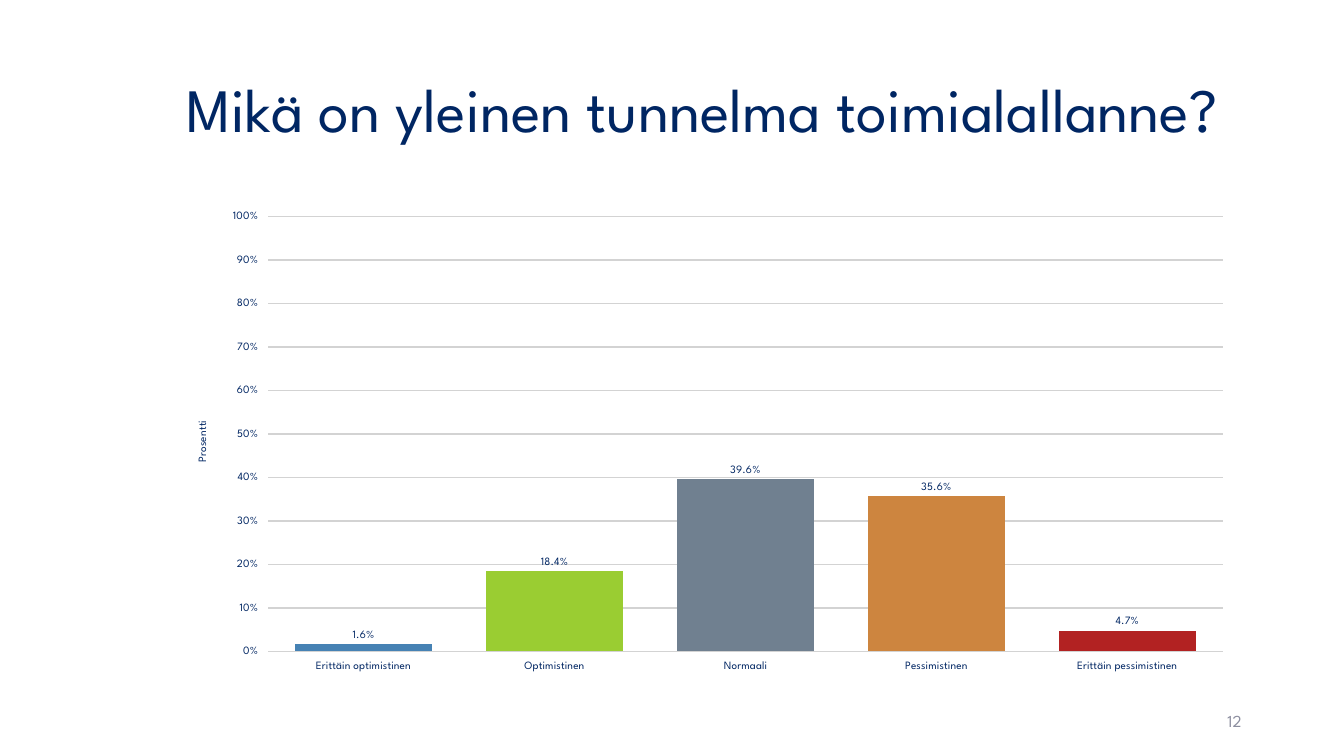
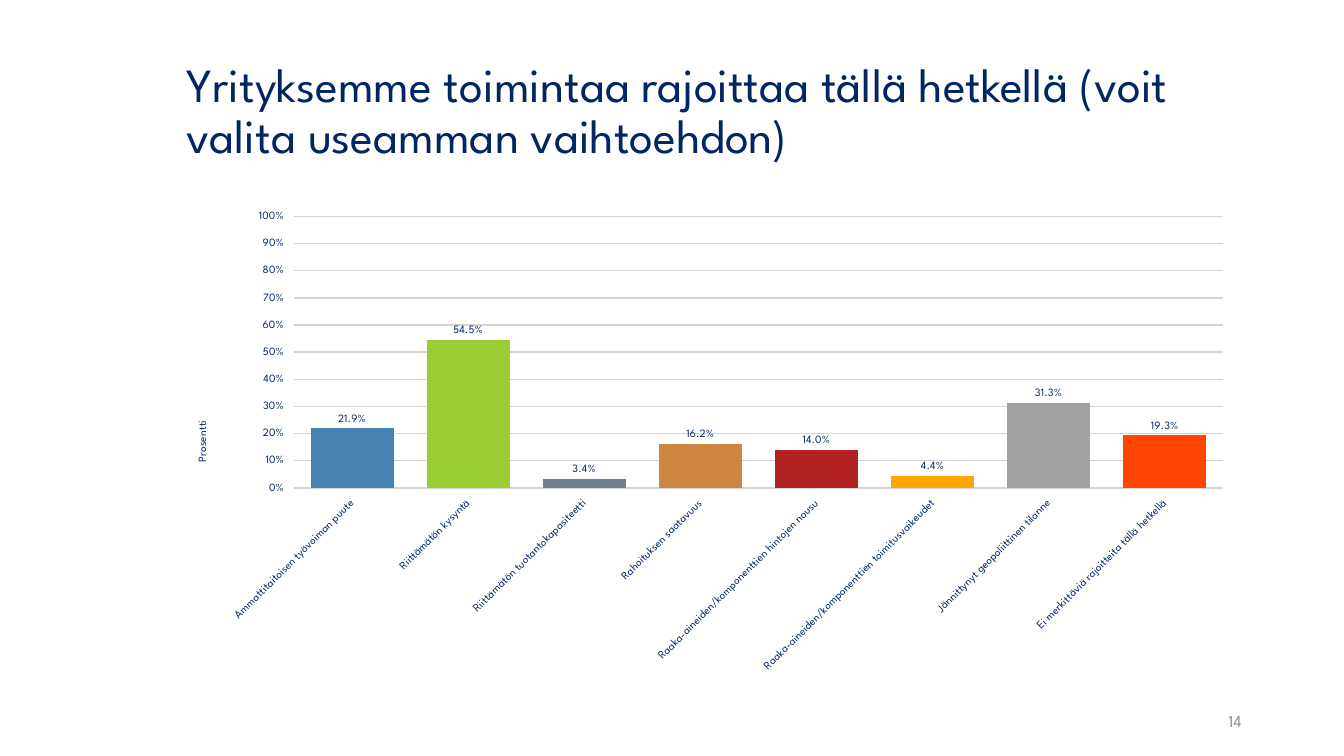
"""Build two survey slides, each with a title, a column chart and a page number."""
from dataclasses import dataclass

from pptx import Presentation
from pptx import util as u
from pptx.chart.data import CategoryChartData
from pptx.dml.color import RGBColor
from pptx.enum import chart as ch
from pptx.enum import text as t


@dataclass(frozen=True)
class Theme:
    font: str = "League Spartan"
    navy: str = "002663"
    muted: str = "8C8E9F"
    grid: str = "D3D3D3"
    bars: tuple = ("4682B4", "9ACD32", "708090", "CD853F",
                   "B22222", "FFA500", "A1A1A1", "FF4500")
    chart_size: int = 18
    label_size: int = 8
    number_size: int = 12


THEME = Theme()
SLIDE_SIZE = (1280, 720)
TITLE_BOX = (168, 38, 1017, 139)
CHART_BOX = (168, 192, 1017, 457)
NUMBER_BOX = (904, 667, 288, 38)

SURVEY = [
    {
        "title": "Mikä on yleinen tunnelma toimialallanne?",
        "title_size": 44,
        "number": "12",
        "slanted": False,
        "answers": {
            "Erittäin optimistinen": 0.016,
            "Optimistinen": 0.184,
            "Normaali": 0.396,
            "Pessimistinen": 0.356,
            "Erittäin pessimistinen": 0.047,
        },
    },
    {
        "title": "Yrityksemme toimintaa rajoittaa tällä hetkellä "
                 "(voit valita useamman vaihtoehdon)",
        "title_size": 34,
        "number": "14",
        "slanted": True,
        "answers": {
            "Ammattitaitoisen työvoiman puute": 0.219,
            "Riittämätön kysyntä": 0.545,
            "Riittämätön tuotantokapasiteetti": 0.034,
            "Rahoituksen saatavuus": 0.162,
            "Raaka-aineiden/komponenttien hintojen nousu": 0.14,
            "Raaka-aineiden/komponenttien toimitusvaikeudet": 0.044,
            "Jännittynyt geopoliittinen tilanne": 0.313,
            "Ei merkittäviä rajoitteita tällä hetkellä": 0.193,
        },
    },
]


def px(*lengths):
    return [u.Emu(length * 9525) for length in lengths]


def style(font, size, color=THEME.navy):
    font.name = THEME.font
    font.size = u.Pt(size)
    font.bold = False
    font.color.rgb = RGBColor.from_string(color)


def paint(fill, color):
    fill.solid()
    fill.fore_color.rgb = RGBColor.from_string(color)


def add_title(slide, wording, size):
    title = slide.shapes.title
    title.left, title.top, title.width, title.height = px(*TITLE_BOX)
    frame = title.text_frame
    frame.text = wording
    frame.auto_size = t.MSO_AUTO_SIZE.NONE
    frame.vertical_anchor = t.MSO_ANCHOR.MIDDLE
    heading = frame.paragraphs[0]
    heading.alignment = t.PP_ALIGN.LEFT
    heading.line_spacing = 0.9
    style(heading.font, size)


def add_number(slide, number):
    frame = slide.shapes.add_textbox(*px(*NUMBER_BOX)).text_frame
    frame.word_wrap = True
    frame.vertical_anchor = t.MSO_ANCHOR.MIDDLE
    frame.text = number
    page = frame.paragraphs[0]
    page.alignment = t.PP_ALIGN.RIGHT
    page.space_after = u.Pt(6)
    style(page.font, THEME.number_size, THEME.muted)


def format_axes(chart, slanted):
    answers, share = chart.category_axis, chart.value_axis
    for axis in (answers, share):
        axis.major_tick_mark = ch.XL_TICK_MARK.OUTSIDE
        axis.format.line.fill.background()
        style(axis.tick_labels.font, THEME.label_size)
    answers.has_major_gridlines = False
    if slanted:
        answers._element.txPr.bodyPr.set("rot", "-2700000")

    share.minimum_scale, share.maximum_scale = 0, 1
    share.major_unit = 0.1
    share.tick_labels.number_format = "0%"
    share.tick_labels.number_format_is_linked = False
    gridline = share.major_gridlines.format.line
    gridline.width = u.Pt(1)
    paint(gridline.fill, THEME.grid)
    caption = share.axis_title.text_frame
    caption.text = "Prosentti"
    style(caption.paragraphs[0].font, THEME.label_size)


def format_bars(plot):
    plot.gap_width, plot.overlap = 40, -2
    plot.vary_by_categories = False
    series = plot.series[0]
    series.invert_if_negative = False
    paint(series.format.fill, THEME.bars[0])
    for index, color in enumerate(THEME.bars[:len(plot.categories)]):
        paint(series.points[index].format.fill, color)
    labels = series.data_labels
    labels.show_value = True
    labels.number_format = "0.0%"
    labels.number_format_is_linked = False
    labels.position = ch.XL_LABEL_POSITION.OUTSIDE_END
    style(labels.font, THEME.label_size)


def add_answer_chart(slide, answers, slanted):
    data = CategoryChartData()
    data.categories = answers.keys()
    data.add_series("Series 1", answers.values())
    chart = slide.shapes.add_chart(
        ch.XL_CHART_TYPE.COLUMN_CLUSTERED, *px(*CHART_BOX), data).chart
    chart.has_legend = False
    chart.has_title = False
    style(chart.font, THEME.chart_size)
    format_axes(chart, slanted)
    format_bars(chart.plots[0])


def main():
    deck = Presentation()
    deck.slide_width, deck.slide_height = px(*SLIDE_SIZE)
    title_only = deck.slide_layouts[5]
    for question in SURVEY:
        slide = deck.slides.add_slide(title_only)
        add_title(slide, question["title"], question["title_size"])
        add_number(slide, question["number"])
        add_answer_chart(slide, question["answers"], question["slanted"])
    deck.save("out.pptx")


if __name__ == "__main__":
    main()
